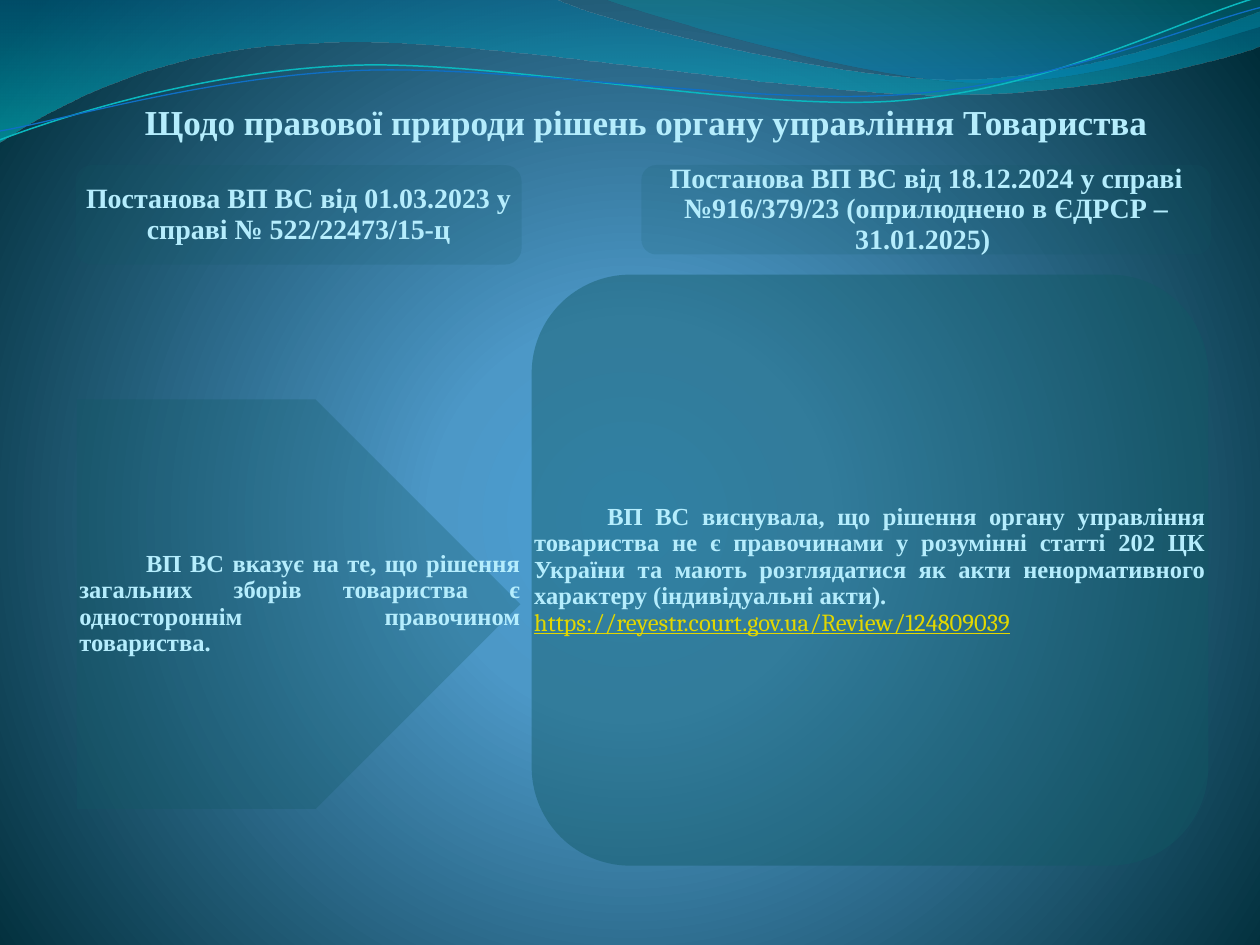
from math import cos, radians, sin

from lxml import etree
from pptx import Presentation
from pptx.dml.color import RGBColor
from pptx.enum.shapes import MSO_SHAPE
from pptx.enum.text import MSO_ANCHOR, PP_ALIGN
from pptx.oxml.ns import qn
from pptx.util import Inches, Pt

PENTAGON = MSO_SHAPE.PENTAGON
SOFT_BOX = MSO_SHAPE.FLOWCHART_ALTERNATE_PROCESS
ROUNDED = MSO_SHAPE.ROUNDED_RECTANGLE
MIDDLE, BOTTOM = MSO_ANCHOR.MIDDLE, MSO_ANCHOR.BOTTOM
CENTER, JUSTIFY = PP_ALIGN.CENTER, PP_ALIGN.JUSTIFY


def rgb(value):
    return RGBColor.from_string(value)


def unrotate(point, box, angle):
    left, top, width, height = box
    dx, dy = point[0] - left - width / 2, point[1] - top - height / 2
    turn = radians(-angle)
    return (width / 2 + dx * cos(turn) - dy * sin(turn),
            height / 2 + dx * sin(turn) + dy * cos(turn))


class SlideBuilder:
    font = "Times New Roman"
    text_color = "B5EDFD"
    link_color = "E2D700"
    card_color = "115964"

    def __init__(self, slide):
        self.slide = slide

    def gradient(self, parent, stops, focus=None):
        solid = parent.find(qn("a:solidFill"))
        grad = etree.Element(qn("a:gradFill"), rotWithShape="1")
        stop_list = etree.SubElement(grad, qn("a:gsLst"))
        for position, color, opacity in stops:
            stop = etree.SubElement(stop_list, qn("a:gs"), pos=str(position * 1000))
            tint = etree.SubElement(stop, qn("a:srgbClr"), val=color)
            if opacity < 100:
                etree.SubElement(tint, qn("a:alpha"), val=str(opacity * 1000))
        if focus:
            path = etree.SubElement(grad, qn("a:path"))
            path.set("path", "circle")
            sides = {side: str(value * 1000) for side, value in zip("ltrb", focus)}
            etree.SubElement(path, qn("a:fillToRect"), **sides)
        else:
            etree.SubElement(grad, qn("a:lin"), ang="5400000", scaled="1")
        parent.replace(solid, grad)

    def background(self, stops, focus):
        self.slide.background.fill.solid()
        self.gradient(self.slide.element.find(".//" + qn("p:bgPr")), stops, focus)

    def freeform(self, box, segments, close, angle=0):
        corners = [(Inches(x), Inches(y)) for *_, x, y in segments]
        builder = self.slide.shapes.build_freeform(*corners[0])
        builder.add_line_segments(corners[1:], close=close)
        shape = builder.convert_to_shape()
        shape.shadow.inherit = False
        shape.left, shape.top, shape.width, shape.height = map(Inches, box)
        shape.rotation = angle
        outline = shape.element.spPr.find(".//" + qn("a:path"))
        outline.set("w", str(shape.width))
        outline.set("h", str(shape.height))
        for step, segment in zip(list(outline), segments):
            if len(segment) == 6:
                bend = etree.Element(qn("a:cubicBezTo"))
                outline.replace(step, bend)
                step = bend
            for old in list(step):
                step.remove(old)
            for point in zip(segment[::2], segment[1::2]):
                x, y = unrotate(point, box, angle)
                etree.SubElement(step, qn("a:pt"), x=str(Inches(x)), y=str(Inches(y)))
        return shape

    def wave(self, box, segments, stops):
        shape = self.freeform(box, segments, True)
        shape.line.fill.background()
        shape.fill.solid()
        self.gradient(shape.element.spPr, stops)

    def curve(self, box, segments, color, width):
        shape = self.freeform(box, segments, False, 357.3)
        shape.fill.background()
        shape.line.color.rgb = rgb(color)
        shape.line.width = Pt(width)

    def card(self, preset, box, opacity):
        shape = self.slide.shapes.add_shape(preset, *map(Inches, box))
        shape.shadow.inherit = False
        shape.line.fill.background()
        shape.fill.solid()
        shape.fill.fore_color.rgb = rgb(self.card_color)
        tint = shape.element.spPr.find(".//" + qn("a:srgbClr"))
        etree.SubElement(tint, qn("a:alpha"), val=str(opacity * 1000))

    def text(self, box, content, size, insets, align=CENTER, anchor=MIDDLE,
             spacing=0.9, indent=0, link=None):
        frame = self.slide.shapes.add_textbox(*map(Inches, box)).text_frame
        frame.word_wrap = True
        frame.vertical_anchor = anchor
        (frame.margin_left, frame.margin_top,
         frame.margin_right, frame.margin_bottom) = map(Inches, insets)
        body = frame.paragraphs[0]
        self.paragraph(body, content, size, align, spacing)
        if indent:
            body._p.get_or_add_pPr().set("indent", str(Inches(indent)))
        if link:
            address = frame.add_paragraph()
            self.paragraph(address, link, size, align, spacing)
            address.font.name = "Cambria"
            address.font.bold = False
            address.font.underline = True
            address.font.color.rgb = rgb(self.link_color)

    def paragraph(self, paragraph, content, size, align, spacing):
        paragraph.text = content
        paragraph.alignment = align
        paragraph.line_spacing = spacing
        paragraph.font.name = self.font
        paragraph.font.size = Pt(size)
        paragraph.font.bold = True
        paragraph.font.color.rgb = rgb(self.text_color)


def main():
    deck = Presentation()
    deck.slide_width, deck.slide_height = Inches(10), Inches(7.5)
    page = SlideBuilder(deck.slides.add_slide(deck.slide_layouts[6]))

    page.background(
        [(0, "4AA0D6", 100), (25, "4C98C7", 100), (100, "002C38", 100)],
        (10, 110, 10, 100),
    )
    page.wave(
        (-0.01, -0.01, 10.02, 1.14),
        [(0, 0), (4.4, -0.01), (4.76, 0.17, 6.64, 0.63, 7.58, 0.63),
         (8.53, 0.63, 9.58, 0.26, 10, 0.09), (10.01, 0.36),
         (9.83, 0.44, 8.7, 0.76, 7.46, 0.75),
         (6.22, 0.75, 3.82, 0.28, 2.57, 0.34),
         (1.29, 0.36, 0.46, 0.83, -0.01, 1.13), (0, 0)],
        [(0, "0074A1", 45), (100, "00C6CF", 55)],
    )
    page.wave(
        (4.79, -0.01, 5.21, 0.7),
        [(4.79, -0.01), (5.09, 0.11, 6.82, 0.62, 7.69, 0.65),
         (8.56, 0.69, 9.61, 0.32, 10, 0.21), (10, 0), (4.79, -0.01)],
        [(0, "00A1A9", 30), (80, "008BBF", 45)],
    )
    page.curve(
        (-0.02, 0.22, 10.02, 0.71),
        [(0, 1.11), (0.48, 0.93, 1.58, 0.57, 2.77, 0.52),
         (3.95, 0.47, 5.93, 0.89, 7.13, 0.8),
         (8.33, 0.71, 9.38, 0.15, 9.98, -0.02)],
        "0AB8BF", 0.85,
    )
    page.curve(
        (-0.02, 0.3, 10.03, 0.58),
        [(0, 1.04), (0.47, 0.96, 1.64, 0.61, 2.83, 0.56),
         (4.03, 0.51, 5.97, 0.84, 7.17, 0.75),
         (8.36, 0.67, 9.41, 0.21, 10, 0.06)],
        "0F6FC6", 0.75,
    )

    page.text((0.67, 0.36, 8.94, 1.1),
              "Щодо правової природи рішень органу управління Товариства",
              20, (0, 0, 0.02, 0.33), anchor=BOTTOM, spacing=1.0)

    earlier_view = (0.61, 3.17, 3.52, 3.25)
    page.card(PENTAGON, earlier_view, 29)
    page.text(earlier_view,
              "ВП ВС вказує на те, що рішення загальних зборів товариства "
              "є одностороннім правочином товариства.",
              14, (0.02, 0.01, 0, 0.01), JUSTIFY, indent=0.53)

    later_view = (4.22, 2.18, 5.37, 4.69)
    page.card(SOFT_BOX, later_view, 44)
    page.text(later_view,
              "ВП ВС виснувала, що рішення органу управління товариства не є "
              "правочинами у розумінні статті 202 ЦК України та мають розглядатися "
              "як акти ненормативного характеру (індивідуальні акти).",
              14, (0.02,) * 4, JUSTIFY, indent=0.58,
              link="https://reyestr.court.gov.ua/Review/124809039")

    rulings = [
        ((0.6, 1.31, 3.54, 0.79), 17,
         "Постанова ВП ВС від 01.03.2023 у справі № 522/22473/15-ц"),
        ((5.09, 1.31, 4.52, 0.71), 16,
         "Постанова ВП ВС від 18.12.2024 у справі №916/379/23 "
         "(оприлюднено в ЄДРСР – 31.01.2025) "),
    ]
    for box, opacity, ruling in rulings:
        page.card(ROUNDED, box, opacity)
        page.text(box, ruling, 16, (0.07,) * 4)

    deck.save("out.pptx")


if __name__ == "__main__":
    main()
